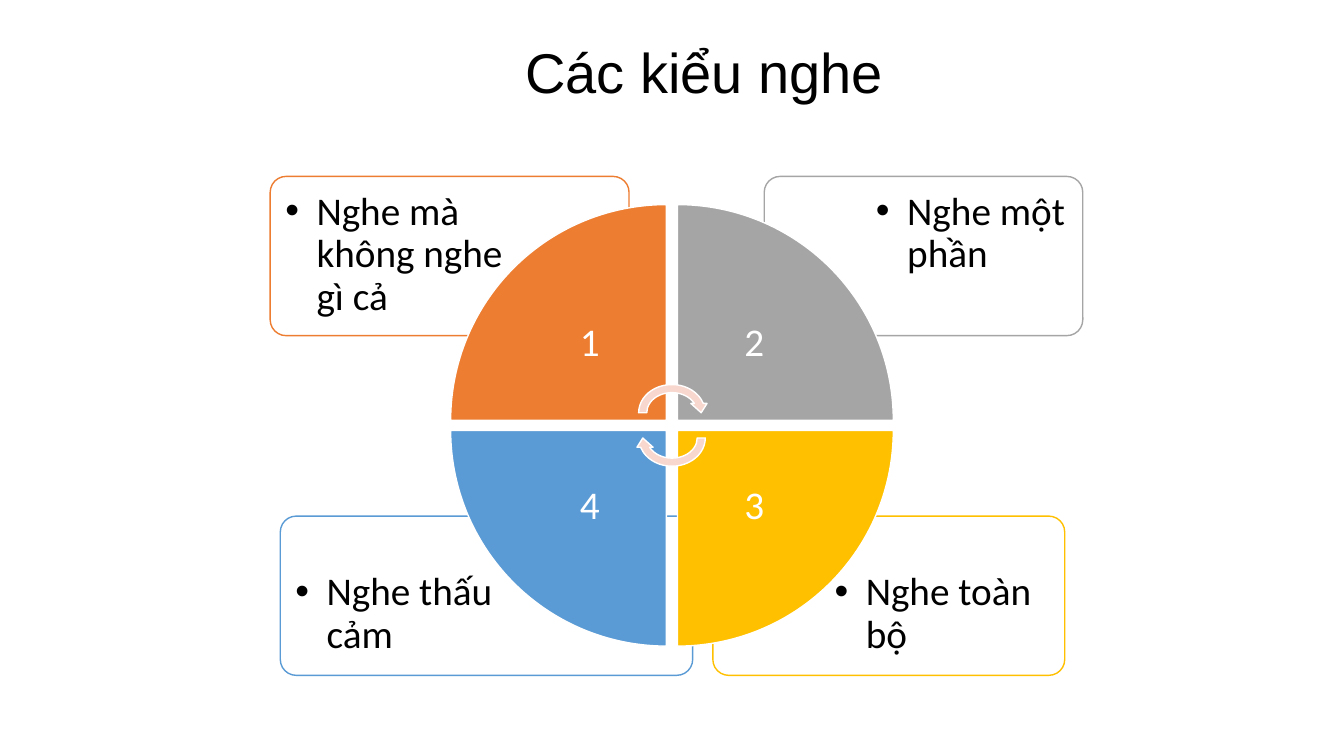
from dataclasses import dataclass

from lxml import etree
from pptx import Presentation
from pptx.dml.color import RGBColor
from pptx.enum.shapes import MSO_SHAPE
from pptx.enum.text import MSO_ANCHOR, MSO_AUTO_SIZE, PP_ALIGN
from pptx.oxml.ns import qn
from pptx.util import Emu, Pt

ROUNDED = MSO_SHAPE.ROUNDED_RECTANGLE
WEDGE = MSO_SHAPE.PIE_WEDGE
ARROW = MSO_SHAPE.CIRCULAR_ARROW
TOP, MIDDLE = MSO_ANCHOR.TOP, MSO_ANCHOR.MIDDLE
LEFT, CENTER = PP_ALIGN.LEFT, PP_ALIGN.CENTER
NO_AUTOSIZE = MSO_AUTO_SIZE.NONE
TITLE_ONLY = 5
EMU_PER_PX = 9144  # 100 px to the inch


@dataclass(frozen=True)
class Theme:
    title_font: str = "Arial"
    body_font: str = "Calibri"
    title_size: int = 40
    body_size: int = 28
    text: str = "000000"
    paper: str = "FFFFFF"
    arrow: str = "F8D7CE"
    orange: str = "ED7D31"
    gray: str = "A5A5A5"
    gold: str = "FFC000"
    blue: str = "5B9BD5"


THEME = Theme()

# Clockwise from the top left: label, colour, column, row, panel box
QUADRANTS = [
    ("Nghe mà không nghe gì cả", THEME.orange, 0, 0, (268, 175, 356, 158)),
    ("Nghe một phần", THEME.gray, 1, 0, (758, 175, 316, 158)),
    ("Nghe toàn bộ", THEME.gold, 1, 1, (707, 512, 349, 158)),
    ("Nghe thấu cảm", THEME.blue, 0, 1, (278, 512, 409, 158)),
]


def px(length):
    return Emu(round(length * EMU_PER_PX))


def emu_box(box):
    return [px(length) for length in box]


def add_run(paragraph, text, font, size, color):
    run = paragraph.add_run()
    run.text = text
    run.font.name = font
    run.font.size = Pt(size)
    run.font.color.rgb = RGBColor.from_string(color)


def add_filled_shape(slide, kind, box, fill, line):
    shape = slide.shapes.add_shape(kind, *emu_box(box))
    shape.shadow.inherit = False
    shape.fill.solid()
    shape.fill.fore_color.rgb = RGBColor.from_string(fill)
    shape.line.color.rgb = RGBColor.from_string(line)
    shape.line.width = Pt(1)
    return shape


def add_text(slide, box, text, color, inset, anchor, alignment):
    frame = slide.shapes.add_textbox(*emu_box(box)).text_frame
    frame.word_wrap = True
    frame.vertical_anchor = anchor
    frame.margin_left = frame.margin_right = px(inset)
    frame.margin_top = frame.margin_bottom = px(inset)
    paragraph = frame.paragraphs[0]
    paragraph.alignment = alignment
    paragraph.line_spacing = 0.9
    add_run(paragraph, text, THEME.body_font, THEME.body_size, color)
    return paragraph


def set_bullet(paragraph, indent):
    properties = paragraph._p.get_or_add_pPr()
    properties.set("marL", str(px(indent)))
    properties.set("indent", str(-px(indent)))
    etree.SubElement(properties, qn("a:buFont"), typeface="Arial")
    etree.SubElement(properties, qn("a:buChar"), char="•")


def add_title(slide, box, text):
    title = slide.shapes.title
    title.left, title.top, title.width, title.height = emu_box(box)
    frame = title.text_frame
    frame.word_wrap = False
    frame.auto_size = NO_AUTOSIZE
    frame.vertical_anchor = TOP
    paragraph = frame.paragraphs[0]
    paragraph.alignment = LEFT
    add_run(paragraph, text, THEME.title_font, THEME.title_size, THEME.text)


def add_panel(slide, box, label, color, column, row):
    left, top, width, height = box
    panel = add_filled_shape(slide, ROUNDED, box, THEME.paper, color)
    panel.adjustments[0] = 0.1
    fill_color = panel.fill._xPr.find(qn("a:solidFill"))[0]
    etree.SubElement(fill_color, qn("a:alpha"), val="90000")

    # The label sits in the panel's outer corner, clear of the wheel
    margin = 3
    text_width, text_height = 0.7 * width - 7, 0.75 * height - 7
    text_left = left + (width - text_width - margin if column else margin)
    text_top = top + (height - text_height - margin if row else margin)
    paragraph = add_text(slide, (text_left, text_top, text_width, text_height),
                         label, THEME.text, 12, TOP, LEFT)
    set_bullet(paragraph, 31)


def add_wheel(slide, box):
    left, top, width, height = box
    wedge, number_side = 214, 152
    for index, (_, color, column, row, _) in enumerate(QUADRANTS):
        wedge_left = left + column * (width - wedge)
        wedge_top = top + row * (height - wedge)
        shape = add_filled_shape(slide, WEDGE, (wedge_left, wedge_top, wedge, wedge),
                                 color, THEME.paper)
        shape.rotation = 90 * index
        # The number sits in the wedge's inner corner
        inner_left = wedge_left + (1 - column) * (wedge - number_side)
        inner_top = wedge_top + (1 - row) * (wedge - number_side)
        add_text(slide, (inner_left, inner_top, number_side, number_side),
                 str(index + 1), THEME.paper, 22, MIDDLE, CENTER)

    # Pair of turning arrows around the hub
    arrow_width, arrow_height, offset = 74, 64, 12.5
    arrow_left = left + (width - arrow_width) / 2
    for direction, rotation in ((-1, 0), (1, 180)):
        arrow_top = top + (height - arrow_height) / 2 + direction * offset
        arrow = add_filled_shape(slide, ARROW,
                                 (arrow_left, arrow_top, arrow_width, arrow_height),
                                 THEME.arrow, THEME.paper)
        arrow.rotation = rotation


def main():
    presentation = Presentation()
    presentation.slide_width, presentation.slide_height = px(1333), px(750)
    slide = presentation.slides.add_slide(presentation.slide_layouts[TITLE_ONLY])
    add_title(slide, (511, 32, 379, 77), "Các kiểu nghe")
    for label, color, column, row, box in QUADRANTS:
        add_panel(slide, box, label, color, column, row)
    add_wheel(slide, (447, 203, 439, 438))
    presentation.save("out.pptx")


if __name__ == "__main__":
    main()
